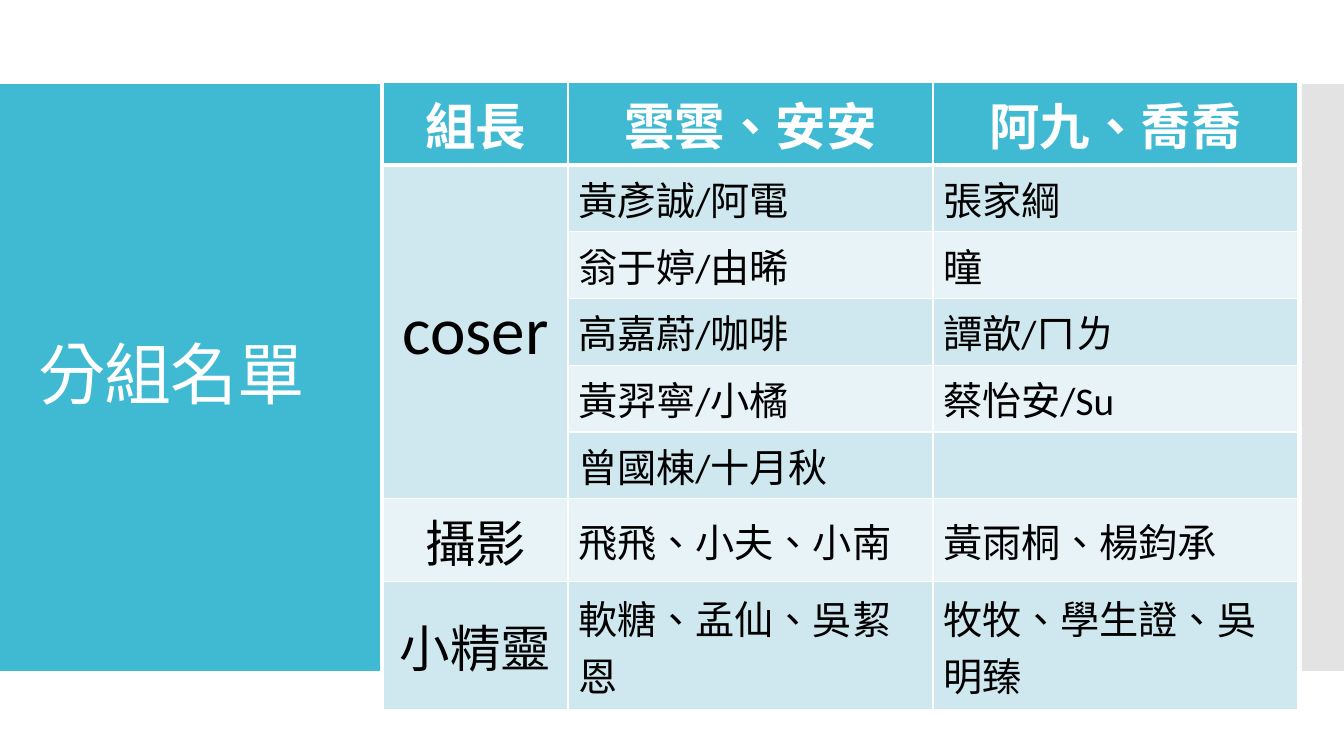
from dataclasses import dataclass

from lxml import etree
from pptx import Presentation
from pptx.dml.color import RGBColor
from pptx.enum.shapes import MSO_SHAPE
from pptx.enum.text import MSO_ANCHOR, MSO_AUTO_SIZE, PP_ALIGN
from pptx.oxml.ns import qn
from pptx.util import Emu, Pt

RECTANGLE = MSO_SHAPE.RECTANGLE
MIDDLE, TOP = MSO_ANCHOR.MIDDLE, MSO_ANCHOR.TOP
LEFT, CENTER = PP_ALIGN.LEFT, PP_ALIGN.CENTER
NO_FIT = MSO_AUTO_SIZE.NONE
EMU_PER_PX = 914400 / 100.8


@dataclass(frozen=True)
class Theme:
    font: str = "Calibri"
    language: str = "zh-TW"
    accent: str = "40BAD2"
    side: str = "C8C8C8"
    bands: tuple = ("CFE7EE", "E8F3F7")
    light: str = "FFFFFF"
    dark: str = "000000"
    title_size: int = 48
    role_size: int = 36
    member_size: int = 28
    thin: int = 1
    thick: int = 3


def px(length):
    return Emu(round(length * EMU_PER_PX))


class SlideBuilder:
    def __init__(self, slide, theme):
        self.slide = slide
        self.theme = theme

    def add_text(self, paragraph, text, size, color, bold=False, align=LEFT, spacing=0):
        paragraph.alignment = align
        run = paragraph.add_run()
        run.text = text
        run.font.name = self.theme.font
        run.font.size = Pt(size)
        run.font.bold = bold
        run.font.color.rgb = RGBColor.from_string(color)
        properties = run.font._element
        properties.set("lang", self.theme.language)
        if spacing:
            properties.set("spc", str(spacing))

    def panel(self, left, top, width, height, color, opacity=100):
        panel = self.slide.shapes.add_shape(RECTANGLE, px(left), px(top), px(width), px(height))
        panel.shadow.inherit = False
        panel.fill.solid()
        panel.fill.fore_color.rgb = RGBColor.from_string(color)
        panel.line.fill.background()
        if opacity < 100:
            tint = panel._element.spPr.find(".//" + qn("a:srgbClr"))
            etree.SubElement(tint, qn("a:alpha")).set("val", str(opacity * 1000))

    def title(self, text, left, top, width, height):
        heading = self.slide.shapes.title
        heading.left, heading.top = px(left), px(top)
        heading.width, heading.height = px(width), px(height)
        frame = heading.text_frame
        frame.word_wrap = True
        frame.auto_size = NO_FIT
        frame.vertical_anchor = MIDDLE
        paragraph = frame.paragraphs[0]
        paragraph.line_spacing = 0.9
        self.add_text(paragraph, text, self.theme.title_size, self.theme.light, spacing=-60)
        self.slide.shapes._spTree.append(heading._element)

    def borders(self, cell, widths):
        properties = cell._tc.get_or_add_tcPr()
        for position, (side, width) in enumerate(widths.items()):
            line = etree.Element(qn(f"a:ln{side}"), w=str(Pt(width)))
            fill = etree.SubElement(line, qn("a:solidFill"))
            etree.SubElement(fill, qn("a:srgbClr")).set("val", self.theme.light)
            properties.insert(position, line)

    def roster(self, rows, left, top, widths, heights, merged_rows):
        theme = self.theme
        frame = self.slide.shapes.add_table(
            len(rows), len(widths), px(left), px(top), px(sum(widths)), px(sum(heights)))
        table = frame.table
        for column, width in zip(table.columns, widths):
            column.width = px(width)
        for row, height in zip(table.rows, heights):
            row.height = px(height)
        for r, entries in enumerate(rows):
            header = r == 0
            for c, text in enumerate(entries):
                cell = table.cell(r, c)
                cell.fill.solid()
                band = theme.accent if header else theme.bands[(r - 1) % 2]
                cell.fill.fore_color.rgb = RGBColor.from_string(band)
                cell.vertical_anchor = TOP if header else MIDDLE
                self.borders(cell, {
                    "L": theme.thin,
                    "R": theme.thin,
                    "T": theme.thick if r == 1 else theme.thin,
                    "B": theme.thick if header else theme.thin,
                })
                if text:
                    size = theme.role_size if header or c == 0 else theme.member_size
                    if text == "coser":
                        size = theme.title_size
                    self.add_text(cell.text_frame.paragraphs[0], text, size,
                                  theme.light if header else theme.dark, header,
                                  CENTER if header or c == 0 else LEFT)
        first, last = merged_rows
        table.cell(first, 0).merge(table.cell(last, 0))


ROSTER = [
    ("組長", "雲雲、安安", "阿九、喬喬"),
    ("coser", "黃彥誠/阿電", "張家綱"),
    ("", "翁于婷/由晞", "曈"),
    ("", "高嘉蔚/咖啡", "譚歆/ㄇㄌ"),
    ("", "黃羿寧/小橘", "蔡怡安/Su"),
    ("", "曾國棟/十月秋", ""),
    ("攝影", "飛飛、小夫、小南", "黃雨桐、楊鈞承"),
    ("小精靈", "軟糖、孟仙、吳絜恩", "牧牧、學生證、吳明臻"),
]


def main():
    deck = Presentation()
    deck.slide_width, deck.slide_height = px(1344), px(756)
    theme = Theme()
    page = SlideBuilder(deck.slides.add_slide(deck.slide_layouts[5]), theme)
    page.panel(0, 84, 380, 587, theme.accent)
    page.panel(1302, 84, 42, 587, theme.side, opacity=50)
    page.title("分組名單", 28, 124, 325, 507)
    page.roster(ROSTER, 383, 82, [185, 365, 365], [72] + [65] * 5 + [71, 128], (1, 5))
    deck.save("out.pptx")


if __name__ == "__main__":
    main()
